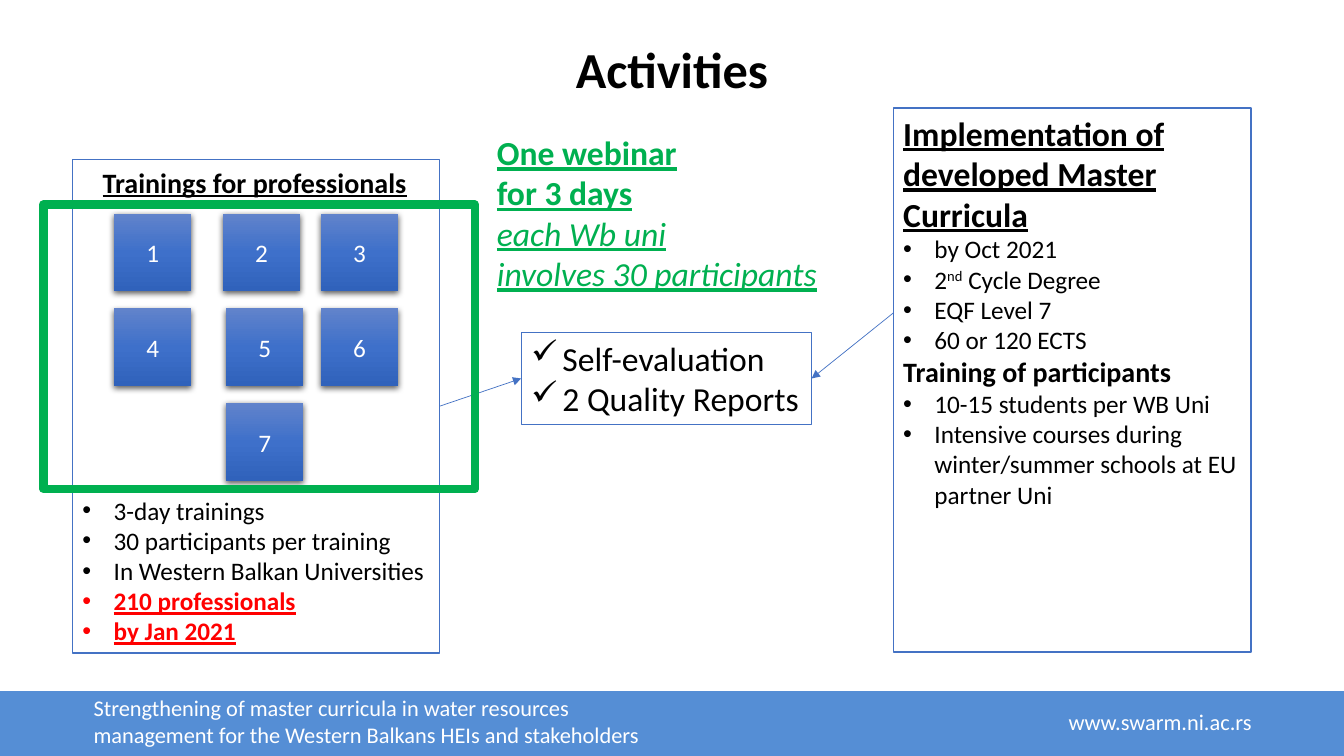
"""Build the Activities slide on trainings, webinar and Master curricula."""
from lxml.etree import SubElement
from pptx import Presentation
from pptx.dml.color import RGBColor
from pptx.enum.shapes import MSO_CONNECTOR, MSO_SHAPE
from pptx.enum.text import MSO_ANCHOR, MSO_AUTO_SIZE, PP_ALIGN
from pptx.oxml import parse_xml
from pptx.oxml.ns import nsdecls, qn
from pptx.util import Inches, Pt

BLACK, WHITE, RED, GREEN = "000000", "FFFFFF", "FF0000", "00B050"
BLUE, FOOTER_BLUE = "4472C4", "558ED5"
TILE_STOPS = [(0, "6183CB"), (50, "3E70CA"), (100, "3062BB")]
TILE_SIZE, TILE_TOP, TILE_PITCH = 0.77, 2.12, 0.94
BULLET_INDENT = 0.31

TITLE = "Activities"
# Paragraphs: text (superscript between carets), size, style letters, colour, bullet
PROJECT = [("Strengthening of master curricula in water resources management "
            "for the Western Balkans HEIs and stakeholders", 16, "", WHITE, "")]
WEBSITE = [("www.swarm.ni.ac.rs", 16, "", WHITE, "")]
TILES = [("1", 1.13, 0), ("2", 2.21, 0), ("3", 3.18, 0), ("4", 1.13, 1),
         ("5", 2.24, 1), ("6", 3.18, 1), ("7", 2.24, 2)]
TRAININGS_HEADING = [("Trainings for professionals", 20, "bu", BLACK, "")]
TRAININGS = [
    ("3-day trainings", 18, "", BLACK, "•"),
    ("30 participants per training", 18, "", BLACK, "•"),
    ("In Western Balkan Universities", 18, "", BLACK, "•"),
    ("210 professionals", 18, "bu", RED, "•"),
    ("by Jan 2021", 18, "bu", RED, "•"),
]
EVALUATION = [
    ("Self-evaluation", 24, "", BLACK, "✓"),
    ("2 Quality Reports", 24, "", BLACK, "✓"),
]
CURRICULA = [
    ("Implementation of developed Master Curricula", 24, "bu", BLACK, ""),
    ("by Oct 2021", 18, "", BLACK, "•"),
    ("2^nd^ Cycle Degree", 18, "", BLACK, "•"),
    ("EQF Level 7", 18, "", BLACK, "•"),
    ("60 or 120 ECTS", 18, "", BLACK, "•"),
    ("Training of participants", 20, "b", BLACK, ""),
    ("10-15 students per WB Uni", 18, "", BLACK, "•"),
    ("Intensive courses during winter/summer schools at EU partner Uni",
     18, "", BLACK, "•"),
]
WEBINAR = [
    ("One webinar", 24, "bu", GREEN, ""),
    ("for 3 days", 24, "bu", GREEN, ""),
    ("each Wb uni", 24, "iu", GREEN, ""),
    ("involves 30 participants", 24, "iu", GREEN, ""),
]


def rgb(color):
    return RGBColor.from_string(color)


def style_run(run, size, style, color):
    font = run.font
    font.name, font.size = "Calibri", Pt(size)
    font.bold, font.italic, font.underline = (key in style for key in "biu")
    font.color.rgb = rgb(color)


def add_bullet(paragraph, bullet):
    properties = paragraph._p.get_or_add_pPr()
    properties.set("marL", str(Inches(BULLET_INDENT)))
    properties.set("indent", str(-Inches(BULLET_INDENT)))
    if bullet == "•":
        SubElement(properties, qn("a:buFont")).set("typeface", "Arial")
    SubElement(properties, qn("a:buChar")).set("char", bullet)


def write(frame, paragraphs, wrap=True):
    frame.word_wrap = wrap
    frame.auto_size = MSO_AUTO_SIZE.SHAPE_TO_FIT_TEXT
    frame.vertical_anchor = MSO_ANCHOR.TOP
    for index, (text, size, style, color, bullet) in enumerate(paragraphs):
        paragraph = frame.add_paragraph() if index else frame.paragraphs[0]
        paragraph.alignment = PP_ALIGN.LEFT
        if bullet:
            add_bullet(paragraph, bullet)
        for position, part in enumerate(text.split("^")):
            run = paragraph.add_run()
            run.text = part
            style_run(run, size, style, color)
            if position % 2:
                run._r.get_or_add_rPr().set("baseline", "30000")


def add_text(shapes, box, paragraphs, wrap=True):
    text_box = shapes.add_textbox(*map(Inches, box))
    write(text_box.text_frame, paragraphs, wrap)
    return text_box


def add_box(shapes, box, fill=None, line=None, width=1, preset=MSO_SHAPE.RECTANGLE):
    shape = shapes.add_shape(preset, *map(Inches, box))
    shape.shadow.inherit = False
    if fill:
        shape.fill.solid()
        shape.fill.fore_color.rgb = rgb(fill)
    else:
        shape.fill.background()
    if line:
        shape.line.color.rgb = rgb(line)
        shape.line.width = Pt(width)
    else:
        shape.line.fill.background()
    return shape


def add_tile(shapes, label, left, row):
    tile = add_box(shapes, (left, TILE_TOP + row * TILE_PITCH, TILE_SIZE, TILE_SIZE))
    properties = tile._element.spPr
    stops = "".join(f'<a:gs pos="{pos * 1000}"><a:srgbClr val="{color}"/></a:gs>'
                    for pos, color in TILE_STOPS)
    gradient = parse_xml(f'<a:gradFill {nsdecls("a")} rotWithShape="1"><a:gsLst>{stops}'
                         '</a:gsLst><a:lin ang="5400000" scaled="0"/></a:gradFill>')
    properties.replace(properties.find(qn("a:noFill")), gradient)
    shadow = SubElement(properties.find(qn("a:effectLst")), qn("a:outerShdw"),
                        blurRad=str(Pt(4.5)), dist=str(Pt(1.5)), dir="5400000",
                        algn="ctr", rotWithShape="0")
    black = SubElement(shadow, qn("a:srgbClr"), val=BLACK)
    SubElement(black, qn("a:alpha"), val="63000")
    frame = tile.text_frame
    frame.text = label
    frame.vertical_anchor = MSO_ANCHOR.MIDDLE
    frame.paragraphs[0].alignment = PP_ALIGN.CENTER
    style_run(frame.paragraphs[0].runs[0], 18, "", WHITE)


def add_arrow(shapes, source, source_side, target, target_side):
    arrow = shapes.add_connector(MSO_CONNECTOR.STRAIGHT, 0, 0, 0, 0)
    arrow.begin_connect(source, source_side)
    arrow.end_connect(target, target_side)
    arrow.line.color.rgb = rgb(BLUE)
    arrow.line.width = Pt(0.5)
    SubElement(arrow.line._get_or_add_ln(), qn("a:tailEnd"), type="triangle")
    SubElement(arrow._element.spPr, qn("a:effectLst"))


def main():
    prs = Presentation()
    prs.slide_width, prs.slide_height = Inches(13.33), Inches(7.5)
    slide = prs.slides.add_slide(prs.slide_layouts[5])
    shapes = slide.shapes

    add_box(shapes, (0, 6.86, 13.33, 0.64), FOOTER_BLUE,
            preset=MSO_SHAPE.FLOWCHART_PROCESS)
    add_text(shapes, (0.83, 6.84, 6.15, 0.64), PROJECT)
    add_text(shapes, (10.5, 6.98, 2.02, 0.37), WEBSITE, wrap=False)

    title = shapes.title
    title.left, title.top, title.width, title.height = map(Inches, (0, 0.23, 13.33, 0.98))
    title.text_frame.text = TITLE
    title.text_frame.vertical_anchor = MSO_ANCHOR.MIDDLE
    heading = title.text_frame.paragraphs[0]
    heading.alignment = PP_ALIGN.CENTER
    heading.line_spacing = 0.9
    style_run(heading.runs[0], 36, "b", BLACK)

    for label, left, row in TILES:
        add_tile(shapes, label, left, row)

    trainings = add_box(shapes, (0.72, 1.58, 3.64, 4.9), line=BLUE)
    add_text(shapes, (0.72, 4.86, 3.64, 1.62), TRAININGS)
    evaluation = add_box(shapes, (5.17, 3.3, 2.88, 0.91), line=BLUE, width=0.75)
    write(evaluation.text_frame, EVALUATION, wrap=False)
    add_box(shapes, (8.86, 1.07, 3.55, 5.4), line=BLUE)
    curricula = add_text(shapes, (8.86, 1.07, 3.55, 4.07), CURRICULA)
    add_text(shapes, (0.92, 1.59, 3.24, 0.44), TRAININGS_HEADING, wrap=False)
    add_arrow(shapes, trainings, 3, evaluation, 1)
    add_arrow(shapes, curricula, 1, evaluation, 3)
    add_box(shapes, (0.43, 2.03, 4.28, 2.82), line=GREEN, width=6)
    add_text(shapes, (4.83, 1.26, 3.5, 1.72), WEBINAR, wrap=False)

    prs.save("out.pptx")


if __name__ == "__main__":
    main()
